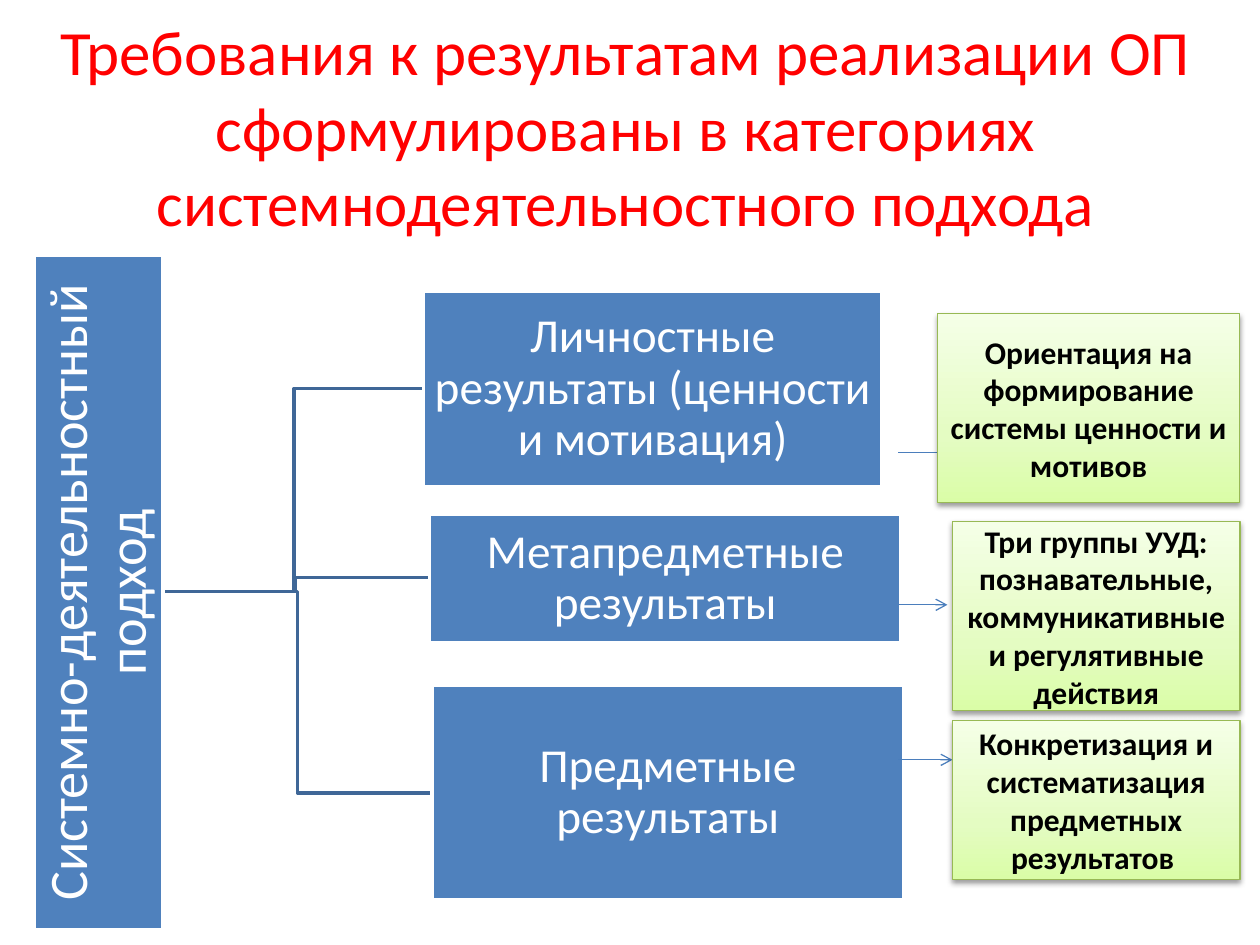
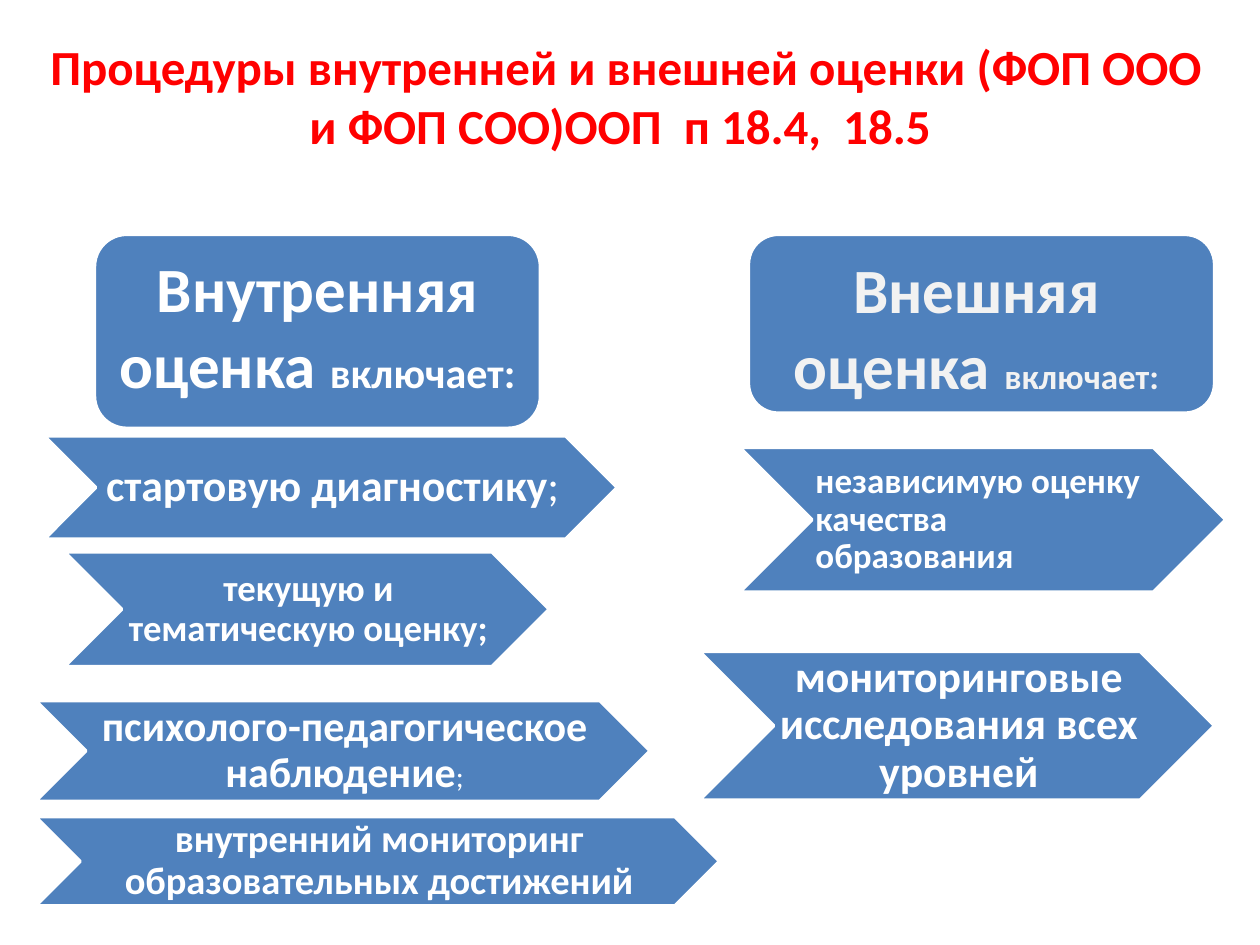
from lxml import etree
from pptx import Presentation
from pptx import util as u
from pptx.dml.color import RGBColor
from pptx.enum import shapes, text
from pptx.oxml import parse_xml
from pptx.oxml.ns import nsdecls, qn

FONT = "Calibri"
RED, WHITE, BLACK, PALE = "FF0000", "FFFFFF", "000000", "F2F2F2"
BLUE, BRANCH, ARROW, GREEN = "4F81BD", "3F6797", "4B7EBC", "98B955"
GREEN_STOPS = [(0, "DAFDA7"), (35, "E4FCC2"), (100, "F5FFE7")]
DEFAULT_INSETS = (7.2, 3.6, 7.2, 3.6)
BOX_INSETS = (1.4, 1.4, 1.4, 1.4)
CHEVRON_INSETS = (2, 1.4, 0, 1.4)
TOP, MIDDLE = text.MSO_ANCHOR.TOP, text.MSO_ANCHOR.MIDDLE
LEFT, CENTER = text.PP_ALIGN.LEFT, text.PP_ALIGN.CENTER


def rgb(hex_code):
    return RGBColor.from_string(hex_code)


def pts(values):
    return [u.Pt(value) for value in values]


def write(shape, wording, size, color=WHITE, bold=False, tail=None,
          align=CENTER, anchor=MIDDLE, spacing=None, insets=DEFAULT_INSETS):
    """Fill one paragraph; tail is an optional (text, size, bold) second run."""
    frame = shape.text_frame
    frame.word_wrap = True
    frame.vertical_anchor = anchor
    (frame.margin_left, frame.margin_top,
     frame.margin_right, frame.margin_bottom) = pts(insets)
    paragraph = frame.paragraphs[0]
    paragraph.alignment = align
    if spacing:
        paragraph.line_spacing = spacing
    runs = [(wording, size, bold)] + ([tail] if tail else [])
    for words, run_size, run_bold in runs:
        run = paragraph.add_run()
        run.text = words
        run.font.name = FONT
        run.font.size = u.Pt(run_size)
        run.font.bold = run_bold
        run.font.color.rgb = rgb(color)


def add_text(slide, place, wording, size, **style):
    write(slide.shapes.add_textbox(*pts(place)), wording, size, **style)


def add_block(slide, kind, place):
    """Blue block with a white outline."""
    block = slide.shapes.add_shape(kind, *pts(place))
    block.shadow.inherit = False
    block.fill.solid()
    block.fill.fore_color.rgb = rgb(BLUE)
    block.line.color.rgb = rgb(WHITE)
    block.line.width = u.Pt(2)
    return block


def add_box(slide, place, wording, size):
    box = add_block(slide, shapes.MSO_SHAPE.RECTANGLE, place)
    write(box, wording, size, spacing=0.9, insets=BOX_INSETS)
    return box


def add_chevron(slide, place, wording, size, **style):
    chevron = add_block(slide, shapes.MSO_SHAPE.CHEVRON, place)
    write(chevron, wording, size, bold=True, spacing=0.9,
          insets=CHEVRON_INSETS, **style)


def add_branch(slide, start, end):
    """Right-angled line that turns halfway between start and end."""
    middle = (start[0] + end[0]) / 2
    builder = slide.shapes.build_freeform(*start, scale=u.Pt(1))
    builder.add_line_segments(
        [(middle, start[1]), (middle, end[1]), end], close=False)
    branch = builder.convert_to_shape()
    branch.shadow.inherit = False
    branch.fill.background()
    branch.line.color.rgb = rgb(BRANCH)
    branch.line.width = u.Pt(2)


def add_arrow(slide, left, right, y):
    arrow = slide.shapes.add_connector(
        shapes.MSO_CONNECTOR.STRAIGHT, *pts((left, y, right, y)))
    arrow.line.color.rgb = rgb(ARROW)
    arrow.line.width = u.Pt(0.75)
    properties = arrow.element.spPr
    head = etree.SubElement(properties.find(qn("a:ln")), qn("a:tailEnd"))
    head.set("type", "arrow")
    etree.SubElement(properties, qn("a:effectLst"))


def add_note(slide, place, wording):
    """Green gradient card with a soft shadow."""
    note = slide.shapes.add_shape(shapes.MSO_SHAPE.RECTANGLE, *pts(place))
    note.fill.gradient()
    note.fill.gradient_angle = 90
    note.line.color.rgb = rgb(GREEN)
    note.line.width = u.Pt(0.75)
    note.shadow.inherit = False
    properties = note.element.spPr
    stops = properties.find(qn("a:gradFill")).find(qn("a:gsLst"))
    for stop in list(stops):
        stops.remove(stop)
    for percent, color in GREEN_STOPS:
        stops.append(parse_xml(
            f'<a:gs {nsdecls("a")} pos="{percent * 1000}">'
            f'<a:srgbClr val="{color}"/></a:gs>'))
    properties.find(qn("a:effectLst")).append(parse_xml(
        f'<a:outerShdw {nsdecls("a")} blurRad="{u.Pt(3.1)}" '
        f'dist="{u.Pt(1.6)}" dir="5400000" rotWithShape="0">'
        f'<a:srgbClr val="{BLACK}"><a:alpha val="38000"/></a:srgbClr>'
        '</a:outerShdw>'))
    write(note, wording, 18, color=BLACK, bold=True)


def build_requirements(slide):
    add_text(slide, (20.2, 20.9, 674.6, 102.2),
             "Требования к результатам реализации ОП сформулированы "
             "в категориях системнодеятельностного подхода", 36, color=RED)

    results = [
        ((241.9, 166.3, 262.1, 111.6),
         "Личностные результаты (ценности и мотивация)"),
        ((245.5, 293.8, 269.3, 73.4), "Метапредметные результаты"),
        ((247, 391.7, 269.3, 122.4), "Предметные результаты"),
    ]
    approach = (-136.1, 301.7, 385.2, 73.4)
    left, top, length, thickness = approach
    trunk = (left + (length + thickness) / 2, top + thickness / 2)
    for (x, y, _, height), _ in reversed(results):
        add_branch(slide, trunk, (x, y + height / 2))
    add_box(slide, approach, "Системно-деятельностный подход", 31).rotation = 270
    for place, wording in results:
        add_box(slide, place, wording, 27)

    notes = [
        ((558.7, 258.5), (535.7, 179.3, 172.8, 108),
         "Ориентация на формирование системы ценности и мотивов"),
        ((541.4, 345.6), (544.3, 298.1, 164.2, 108),
         "Три группы УУД: познавательные, коммуникативные "
         "и регулятивные действия"),
        ((544.3, 434.2), (544.3, 411.8, 164.2, 90.7),
         "Конкретизация и систематизация предметных результатов "),
    ]
    for (tip, y), place, wording in notes:
        add_arrow(slide, 513.4, tip, y)
        add_note(slide, place, wording)


def build_procedures(slide):
    add_text(slide, (14.4, 15.1, 686.2, 79.2),
             "Процедуры внутренней и внешней оценки (ФОП ООО "
             "и ФОП СОО)ООП  п 18.4,  18.5 ", 28, color=RED, bold=True)

    rounded = shapes.MSO_SHAPE.ROUNDED_RECTANGLE
    internal = add_block(slide, rounded, (54, 133.9, 254.9, 110.9))
    write(internal, "Внутренняя оценка ", 36, bold=True, anchor=TOP,
          tail=("включает:", 24, True))
    add_block(slide, rounded, (427.7, 133.9, 266.4, 102.2))
    add_text(slide, (427.7, 139.7, 260.6, 94.3), "Внешняя оценка ", 36,
             color=PALE, bold=True, anchor=TOP, tail=("включает:", 20, True))

    add_chevron(slide, (25.2, 249.1, 327.6, 59), "стартовую диагностику", 25,
                tail=(";", 25, False))
    add_chevron(slide, (36.7, 315.4, 277.2, 65.5),
                "текущую и тематическую оценку;", 21)
    add_chevron(slide, (20.2, 400.3, 351.4, 57.6),
                "психолого-педагогическое наблюдение", 24,
                tail=(";", 17, False))
    add_chevron(slide, (20.2, 466.6, 391, 51.1),
                "внутренний мониторинг образовательных достижений", 22)
    add_chevron(slide, (422.6, 255.6, 277.9, 82.8),
                "независимую оценку качества образования", 20, align=LEFT)
    add_chevron(slide, (399.6, 372.2, 294.5, 85),
                "мониторинговые исследования всех уровней", 25)


def main():
    deck = Presentation()
    deck.slide_width, deck.slide_height = u.Pt(720), u.Pt(540)
    blank = deck.slide_layouts[6]
    for build in (build_requirements, build_procedures):
        build(deck.slides.add_slide(blank))
    deck.save("out.pptx")


if __name__ == "__main__":
    main()
